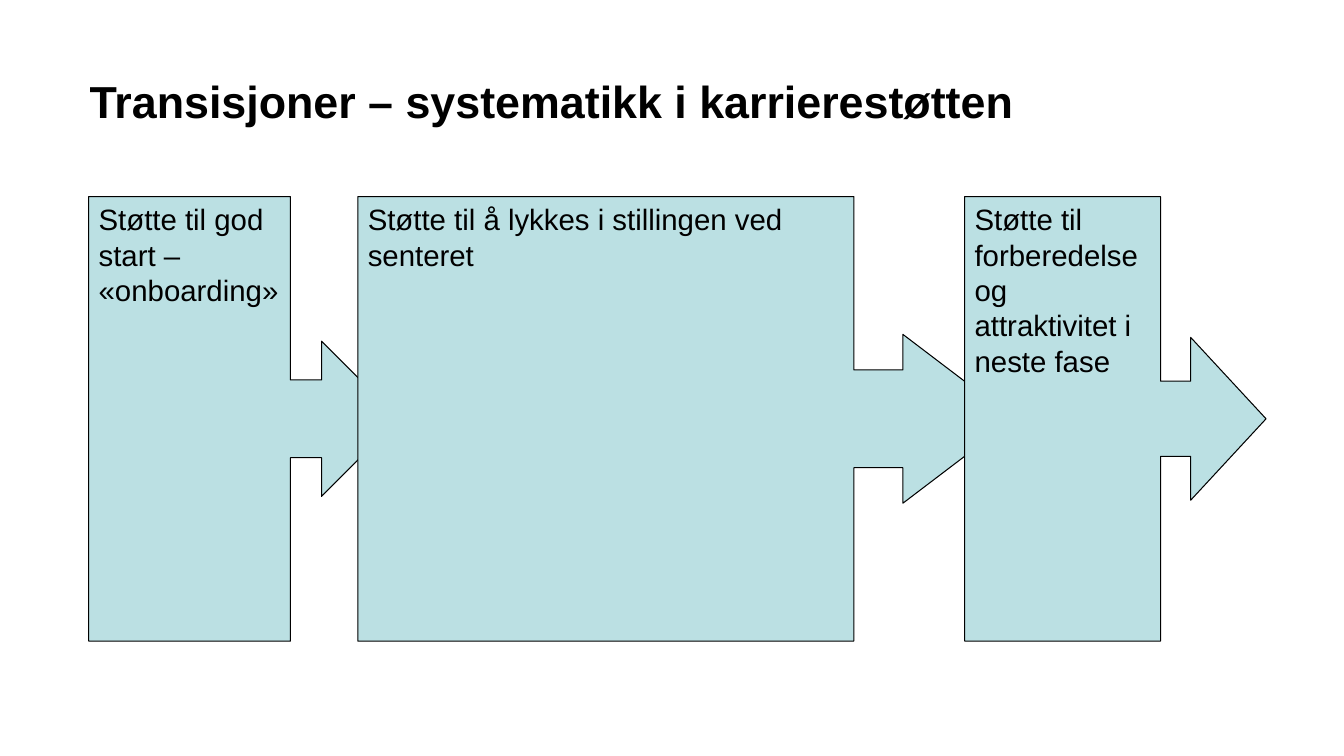
from pptx import Presentation
from pptx import util as u
from pptx.dml import color
from pptx.enum import shapes, text

TITLE = "Transisjoner – systematikk i karrierestøtten"
STEPS = [
    (63.36, 221.76, (0.25, 0.25, 0.25, 0.65),
     ["Støtte til god start –", "«onboarding»"]),
    (255.6, 468.72, (0.22, 0.19, 0.25, 0.756),
     ["Støtte til å lykkes i stillingen ved senteret"]),
    (689.04, 215.28, (0.25, 0.27, 0.25, 0.65),
     ["Støtte til forberedelse og", "attraktivitet i neste fase"]),
]
TOP, HIGH = 140.4, 317.52
THEME = {"font": "Arial", "ink": "000000", "fill": "BBE0E3",
         "head": 32, "body": 21, "line": 0.75}


def tint(name):
    return color.RGBColor.from_string(THEME[name])


def write(shape, lines, size, bold, anchor):
    frame = shape.text_frame
    frame.word_wrap = True
    frame.vertical_anchor = anchor
    for i, line in enumerate(lines):
        para = frame.add_paragraph() if i else frame.paragraphs[0]
        para.alignment = text.PP_ALIGN.LEFT
        run = para.add_run()
        run.text = line
        font = run.font
        font.name = THEME["font"]
        font.size = u.Pt(size)
        font.bold = bold
        font.color.rgb = tint("ink")


def callout(slide, left, wide, adjust, lines):
    box = slide.shapes.add_shape(
        shapes.MSO_SHAPE.RIGHT_ARROW_CALLOUT,
        u.Pt(left), u.Pt(TOP), u.Pt(wide), u.Pt(HIGH))
    for i, value in enumerate(adjust):
        box.adjustments[i] = value
    box.shadow.inherit = False
    box.fill.solid()
    box.fill.fore_color.rgb = tint("fill")
    box.line.color.rgb = tint("ink")
    box.line.width = u.Pt(THEME["line"])
    write(box, lines, THEME["body"], False, text.MSO_ANCHOR.TOP)


def main():
    deck = Presentation()
    deck.slide_width, deck.slide_height = u.Pt(960), u.Pt(540)
    slide = deck.slides.add_slide(deck.slide_layouts[6])
    head = slide.shapes.add_textbox(
        u.Pt(56.88), u.Pt(37.44), u.Pt(855.36), u.Pt(69.12))
    write(head, [TITLE], THEME["head"], True, text.MSO_ANCHOR.MIDDLE)
    for step in STEPS:
        callout(slide, *step)
    deck.save("out.pptx")


if __name__ == "__main__":
    main()
